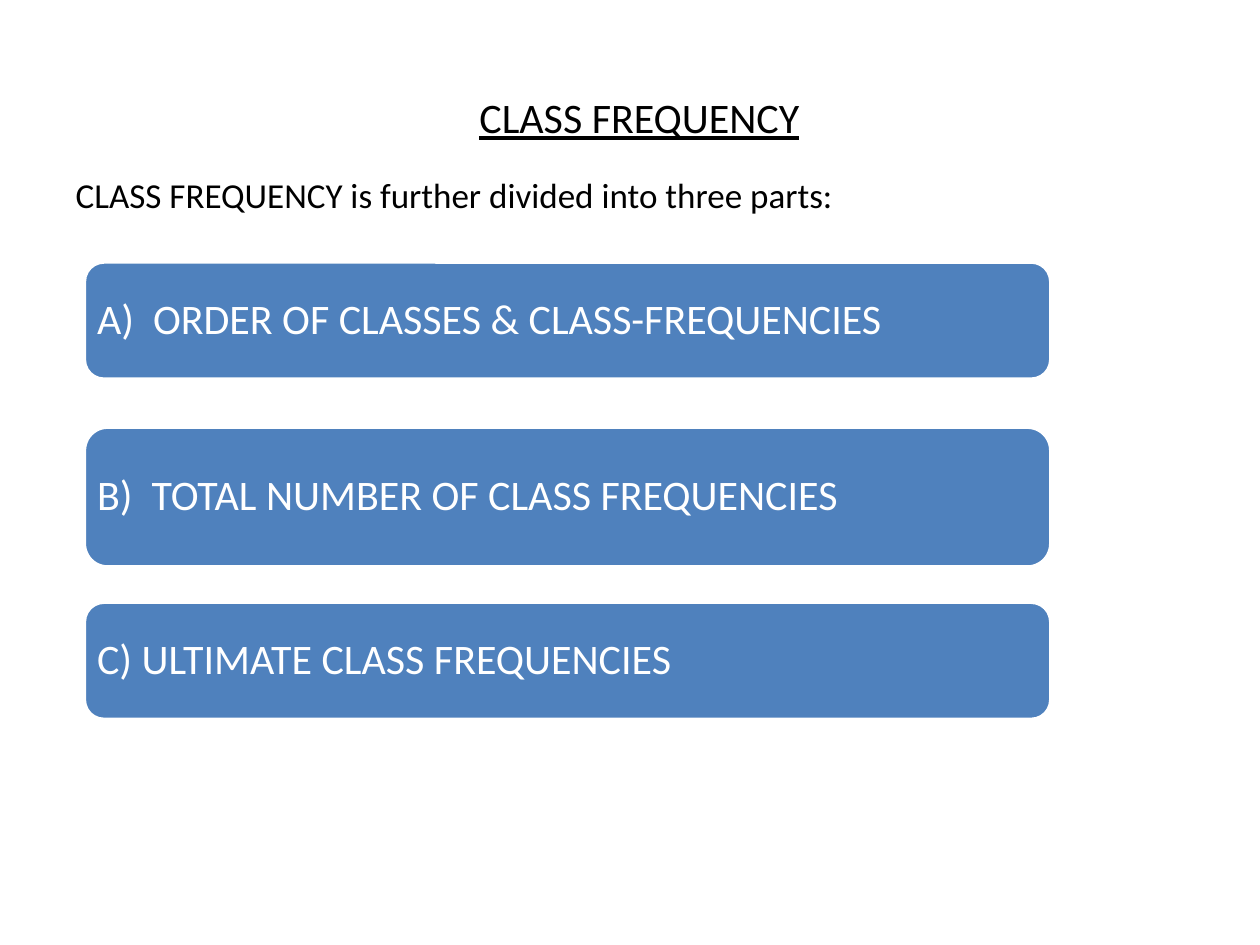
from pptx import Presentation
from pptx import util as u
from pptx.dml.color import RGBColor
from pptx.enum import shapes, text
from pptx.oxml.ns import qn
from lxml import etree

COLORS = {"ink": "000000", "box": "4F81BD", "white": "FFFFFF"}
FONT = "Calibri"


def write(tf, content, size=24, color="ink", align=text.PP_ALIGN.LEFT,
          underline=None, anchor=text.MSO_ANCHOR.MIDDLE):
    """Fill a text frame with one formatted paragraph and return it."""
    tf.word_wrap = True
    tf.auto_size = text.MSO_AUTO_SIZE.NONE
    tf.vertical_anchor = anchor
    p = tf.paragraphs[0]
    p.alignment = align
    r = p.add_run()
    r.text = content
    r.font.name = FONT
    r.font.size = u.Pt(size)
    r.font.underline = underline
    r.font.color.rgb = RGBColor.from_string(COLORS[color])
    return p


class SlideBuilder:
    BOX_LEFT, BOX_WIDTH = 0.67, 7.67
    INSET = 0.1
    CORNER_INSET = 0.29 / 6  # text inset of a rounded corner, per unit of height

    def __init__(self, prs):
        self.slide = prs.slides.add_slide(prs.slide_layouts[1])

    def place(self, sp, left, top, width, height):
        sp.left, sp.top = u.Inches(left), u.Inches(top)
        sp.width, sp.height = u.Inches(width), u.Inches(height)

    def title(self, content):
        sp = self.slide.shapes.title
        self.place(sp, 0.5, 0.3, 9, 1.25)
        tf = sp.text_frame
        tf.margin_left = u.Inches(0.25)
        write(tf, content, align=text.PP_ALIGN.CENTER, underline=True)

    def body(self, content):
        sp = self.slide.placeholders[1]
        self.place(sp, 0.5, 1.33, 9, 5.37)
        p = write(sp.text_frame, content, size=20, anchor=text.MSO_ANCHOR.TOP)
        p.space_before = u.Pt(4)
        # Hanging indent without a bullet
        pPr = p._p.get_or_add_pPr()
        pPr.set("marL", str(u.Inches(0.38)))
        pPr.set("indent", str(-u.Inches(0.38)))
        etree.SubElement(pPr, qn("a:buNone"))

    def box(self, content, top, height):
        sp = self.slide.shapes.add_shape(
            shapes.MSO_SHAPE.ROUNDED_RECTANGLE, u.Inches(self.BOX_LEFT),
            u.Inches(top), u.Inches(self.BOX_WIDTH), u.Inches(height))
        sp.shadow.inherit = False
        sp.fill.solid()
        sp.fill.fore_color.rgb = RGBColor.from_string(COLORS["box"])
        sp.line.color.rgb = RGBColor.from_string(COLORS["white"])
        sp.line.width = u.Pt(2)
        tf = sp.text_frame
        inset = u.Inches(self.INSET - self.CORNER_INSET * height)
        tf.margin_left = tf.margin_right = inset
        tf.margin_top = tf.margin_bottom = inset
        p = write(tf, content, color="white")
        p.line_spacing = 0.9
        p.space_after = u.Pt(8.4)


def main():
    prs = Presentation()
    prs.slide_width, prs.slide_height = u.Inches(10), u.Inches(7.5)
    s = SlideBuilder(prs)

    # Heading and introduction
    s.title("CLASS FREQUENCY")
    s.body("CLASS FREQUENCY is further divided into three parts:")

    # The three parts
    for content, top, height in (
            ("A)  ORDER OF CLASSES & CLASS-FREQUENCIES", 2.08, 0.93),
            ("B)  TOTAL NUMBER OF CLASS FREQUENCIES", 3.39, 1.11),
            ("C) ULTIMATE CLASS FREQUENCIES", 4.78, 0.93)):
        s.box(content, top, height)

    prs.save("out.pptx")


if __name__ == "__main__":
    main()
